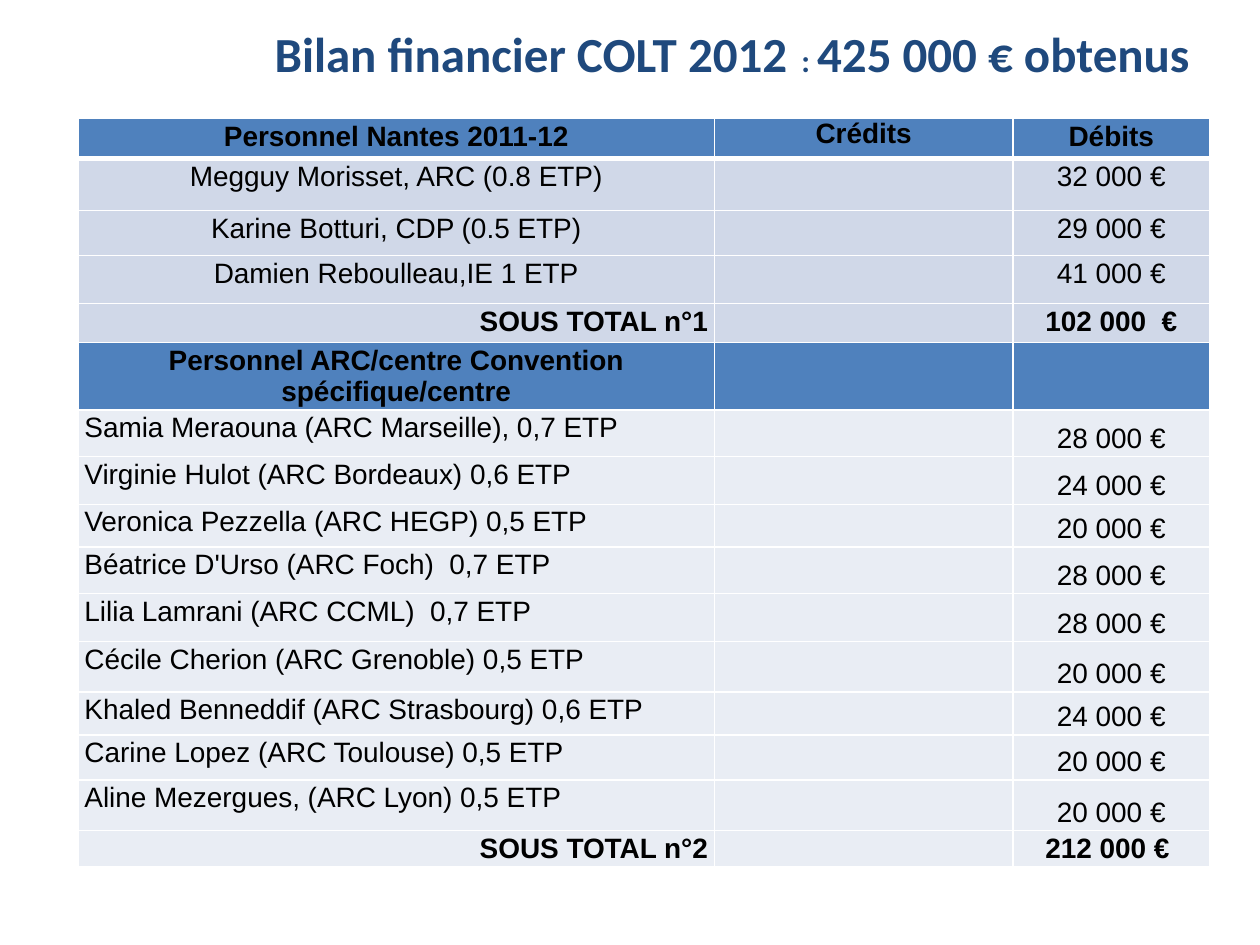
from lxml import etree
from pptx import Presentation
from pptx.dml.color import RGBColor
from pptx.enum.text import MSO_ANCHOR, PP_ALIGN
from pptx.oxml.ns import qn
from pptx.util import Inches, Pt

LEFT, CENTER, RIGHT = PP_ALIGN.LEFT, PP_ALIGN.CENTER, PP_ALIGN.RIGHT
TOP, BOTTOM = MSO_ANCHOR.TOP, MSO_ANCHOR.BOTTOM
TITLE_ONLY = 5
GRID = 0.1  # inches per grid step: 100 columns by 75 rows

COLORS = {
    "title": "1F497D",
    "text": "000000",
    "border": "FFFFFF",
    "header": "4F81BD",
    "nantes": "D0D8E8",
    "centres": "E9EDF4",
}

# Format of each kind of row: label alignment, bold, anchor of the amount
ROW_KINDS = {
    "header": (CENTER, True, TOP),
    "nantes": (CENTER, False, TOP),
    "centre": (LEFT, False, BOTTOM),
    "total": (RIGHT, True, TOP),
}

COLUMNS = [50.5, 23.7, 15.6]

# Kind, fill, height in grid rows, label, credit, debit
ROWS = [
    ("header", "header", 3.2, "Personnel Nantes 2011-12", "Crédits", "Débits"),
    ("nantes", "nantes", 4.1, "Megguy Morisset, ARC (0.8 ETP)", "", "32 000 €"),
    ("nantes", "nantes", 3.6, "Karine Botturi, CDP (0.5 ETP)", "", "29 000 €"),
    ("nantes", "nantes", 3.8, "Damien Reboulleau,IE 1 ETP", "", "41 000 €"),
    ("total", "nantes", 3.1, "SOUS TOTAL n°1", "", "102 000  €"),
    ("header", "header", 3.9, "Personnel ARC/centre Convention spécifique/centre", "", ""),
    ("centre", "centres", 3.7, "Samia Meraouna (ARC Marseille), 0,7 ETP", "", "28 000 €"),
    ("centre", "centres", 3.8, "Virginie Hulot (ARC Bordeaux) 0,6 ETP", "", "24 000 €"),
    ("centre", "centres", 3.4, "Veronica Pezzella (ARC HEGP) 0,5 ETP", "", "20 000 €"),
    ("centre", "centres", 3.7, "Béatrice D'Urso (ARC Foch)  0,7 ETP", "", "28 000 €"),
    ("centre", "centres", 3.8, "Lilia Lamrani (ARC CCML)  0,7 ETP", "", "28 000 €"),
    ("centre", "centres", 4.0, "Cécile Cherion (ARC Grenoble) 0,5 ETP", "", "20 000 €"),
    ("centre", "centres", 3.4, "Khaled Benneddif (ARC Strasbourg) 0,6 ETP", "", "24 000 €"),
    ("centre", "centres", 3.6, "Carine Lopez (ARC Toulouse) 0,5 ETP", "", "20 000 €"),
    ("centre", "centres", 4.0, "Aline Mezergues, (ARC Lyon) 0,5 ETP", "", "20 000 €"),
    ("total", "centres", 2.6, "SOUS TOTAL n°2", "", "212 000 € "),
]


def steps(count):
    return Inches(count * GRID)


def set_values(target, values):
    for name, value in values.items():
        setattr(target, name, value)


class BudgetPage:
    """Holds the text style and the current slide."""

    def __init__(self, deck):
        self.page = deck.slides.add_slide(deck.slide_layouts[TITLE_ONLY])
        self.table_size = 16

    def span(self, para, text, size, color, font="Arial", bold=False):
        run = para.add_run()
        run.text = text
        set_values(run.font, {"name": font, "size": Pt(size), "bold": bold})
        run.font.color.rgb = RGBColor.from_string(COLORS[color])

    def title(self, place, spans):
        box = self.page.shapes.title
        set_values(box, dict(zip(("left", "top", "width", "height"), map(steps, place))))
        set_values(box.text_frame, {"vertical_anchor": TOP, "word_wrap": True})
        para = box.text_frame.paragraphs[0]
        para.alignment = CENTER
        for text, size in spans:
            self.span(para, text, size, "title", "Calibri", True)

    def borders(self, cell, widths):
        """Draw the cell's sides; widths are points for L, R, T and B."""
        properties = cell._tc.get_or_add_tcPr()
        for side, width in widths.items():
            line = etree.SubElement(properties, qn(f"a:ln{side}"), w=str(Pt(width)))
            fill = etree.SubElement(line, qn("a:solidFill"))
            etree.SubElement(fill, qn("a:srgbClr"), val=COLORS["border"])

    def cell(self, cell, text, fill, alignment, bold, anchor, margins, widths):
        self.borders(cell, widths)
        cell.fill.solid()
        cell.fill.fore_color.rgb = RGBColor.from_string(COLORS[fill])
        across, down = map(Inches, margins)
        set_values(cell, {"margin_left": across, "margin_right": across,
                          "margin_top": down, "margin_bottom": down,
                          "vertical_anchor": anchor})
        para = cell.text_frame.paragraphs[0]
        para.alignment = alignment
        if text:
            self.span(para, text, self.table_size, "text", bold=bold)
        else:
            # Keeps an empty cell from stretching its row
            etree.SubElement(para._p, qn("a:endParaRPr"), sz=str(self.table_size * 100))

    def table(self, left, top, columns, rows):
        heights = [row[2] for row in rows]
        frame = self.page.shapes.add_table(
            len(rows), len(columns), steps(left), steps(top),
            steps(sum(columns)), steps(sum(heights)))
        table = frame.table
        for column, width in zip(table.columns, columns):
            column.width = steps(width)
        for index, (kind, fill, height, *texts) in enumerate(rows):
            table.rows[index].height = steps(height)
            label_alignment, bold, amount_anchor = ROW_KINDS[kind]
            widths = {"L": 1, "R": 1, "T": 3 if index == 1 else 1,
                      "B": 3 if index == 0 else 1}
            layouts = [
                (label_alignment, bold, TOP, (0.05, 0.02)),
                (CENTER, bold, TOP, (0, 0)),
                (CENTER, bold, amount_anchor, (0.05, 0.02)),
            ]
            for number, (text, layout) in enumerate(zip(texts, layouts)):
                self.cell(table.cell(index, number), text, fill, *layout, widths)


def main():
    deck = Presentation()
    deck.slide_width, deck.slide_height = steps(100), steps(75)
    budget = BudgetPage(deck)
    budget.title((13.1, 1.4, 90, 10), [
        ("Bilan financier COLT 2012", 28), ("  : ", 18), ("425 000 € obtenus", 28)])
    budget.table(6.2, 9.4, COLUMNS, ROWS)
    deck.save("out.pptx")


if __name__ == "__main__":
    main()
